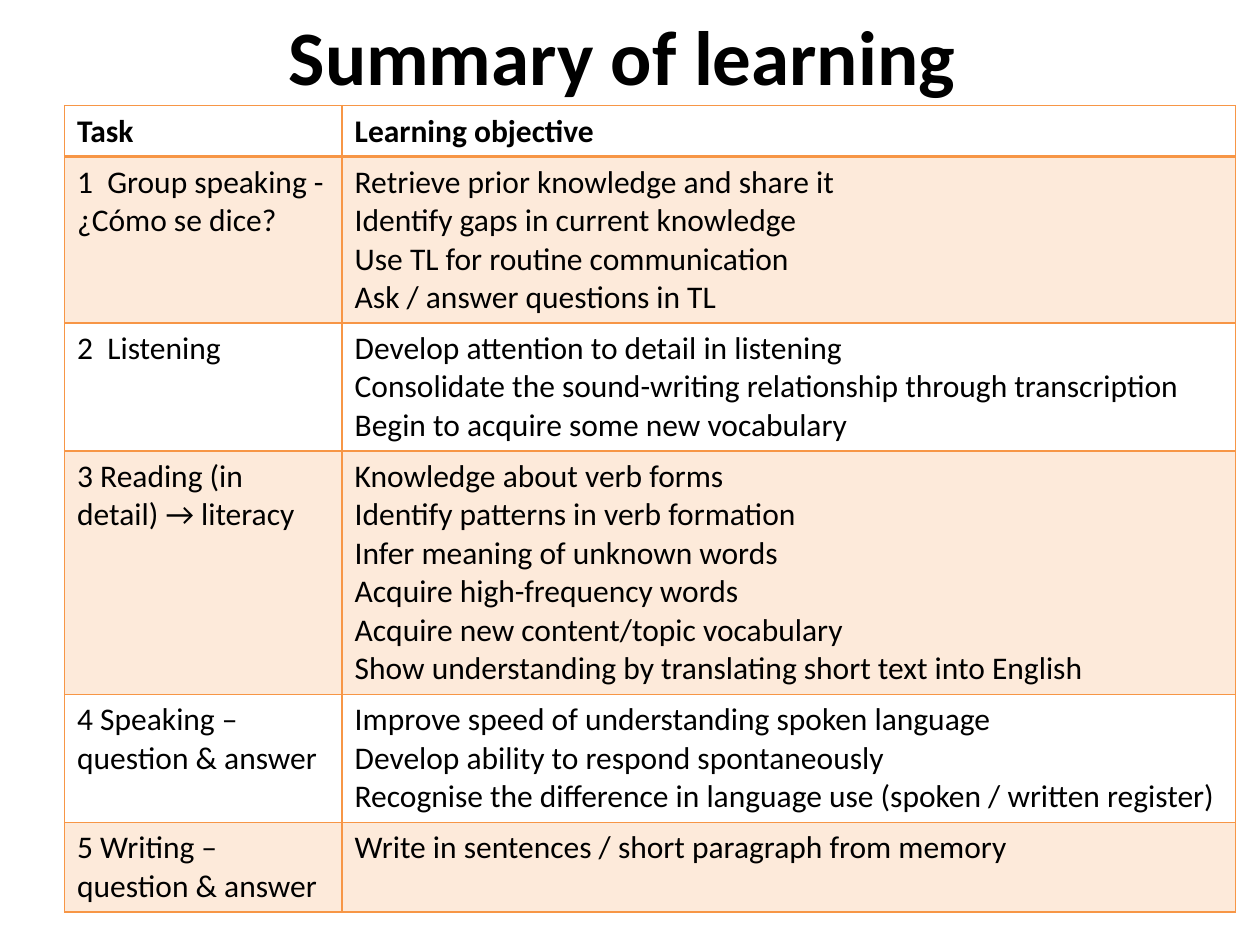
from lxml.etree import SubElement
from pptx import Presentation
from pptx.dml.color import RGBColor
from pptx.enum.text import MSO_ANCHOR, PP_ALIGN
from pptx.oxml.ns import qn
from pptx.util import Pt

BLACK = RGBColor(0x00, 0x00, 0x00)
ORANGE = RGBColor(0xF7, 0x96, 0x46)
PALE_ORANGE = RGBColor(0xFD, 0xEA, 0xDA)

LINE_HEIGHT = 21.95
CELL_PADDING = 7.2  # top and bottom margins together

# Each row: task, objectives, number of text lines
HEADER = ("Task", ["Learning objective"], 1)
TASKS = [
    ("1  Group speaking - ¿Cómo se dice?",
     ["Retrieve prior knowledge and share it",
      "Identify gaps in current knowledge",
      "Use TL for routine communication",
      "Ask / answer questions in TL"], 4),
    ("2  Listening",
     ["Develop attention to detail in listening",
      "Consolidate the sound-writing relationship through transcription",
      "Begin to acquire some new vocabulary"], 3),
    ("3 Reading (in detail) → literacy",
     ["Knowledge about verb forms",
      "Identify patterns in verb formation",
      "Infer meaning of unknown words",
      "Acquire high-frequency words",
      "Acquire new content/topic vocabulary",
      "Show understanding by translating short text into English"], 6),
    ("4 Speaking – question & answer",
     ["Improve speed of understanding spoken language",
      "Develop ability to respond spontaneously",
      "Recognise the difference in language use (spoken / written register)"], 3),
    ("5 Writing – question & answer",
     ["Write in sentences / short paragraph from memory"], 2),
]


class SlideBuilder:
    font_name = "Calibri"

    def __init__(self, slide):
        self.slide = slide

    def style(self, paragraph, size, bold):
        font = paragraph.font
        font.name, font.size, font.bold = self.font_name, Pt(size), bold
        font.color.rgb = BLACK

    def title(self, text, left, top, width, height):
        title = self.slide.shapes.title
        title.left, title.top = Pt(left), Pt(top)
        title.width, title.height = Pt(width), Pt(height)
        frame = title.text_frame
        frame.text = text
        frame.vertical_anchor = MSO_ANCHOR.MIDDLE
        frame.paragraphs[0].alignment = PP_ALIGN.CENTER
        self.style(frame.paragraphs[0], 44, True)

    def borders(self, cell, top, bottom):
        """Draw the cell's four borders; they must precede its fill."""
        properties = cell._tc.get_or_add_tcPr()
        for side, width in (("L", 1), ("R", 1), ("T", top), ("B", bottom)):
            line = SubElement(properties, qn(f"a:ln{side}"), w=str(Pt(width)))
            fill = SubElement(line, qn("a:solidFill"))
            SubElement(fill, qn("a:srgbClr"), val=str(ORANGE))

    def table(self, rows, left, top, column_widths):
        heights = [CELL_PADDING + LINE_HEIGHT * lines for *_, lines in rows]
        table = self.slide.shapes.add_table(
            len(rows), len(column_widths), Pt(left), Pt(top),
            Pt(sum(column_widths)), Pt(sum(heights))).table
        table.horz_banding = False
        for column, width in zip(table.columns, column_widths):
            column.width = Pt(width)
        for index, (task, objectives, _) in enumerate(rows):
            table.rows[index].height = Pt(heights[index])
            for cell, lines in zip(table.rows[index].cells, ([task], objectives)):
                cell.text = "\n".join(lines)
                for paragraph in cell.text_frame.paragraphs:
                    self.style(paragraph, 18, index == 0)
                self.borders(cell, top=2 if index == 1 else 1,
                             bottom=2 if index == 0 else 1)
                if index % 2:
                    cell.fill.solid()
                    cell.fill.fore_color.rgb = PALE_ORANGE
                else:
                    cell.fill.background()


def main():
    deck = Presentation()
    deck.slide_width, deck.slide_height = Pt(720), Pt(540)
    builder = SlideBuilder(deck.slides.add_slide(deck.slide_layouts[5]))

    # Heading
    builder.title("Summary of learning ", 36.7, -13.7, 648, 90)

    # Tasks and their objectives
    builder.table([HEADER, *TASKS], 36.9, 60.4, (158.6, 510.5))

    deck.save("out.pptx")


if __name__ == "__main__":
    main()
